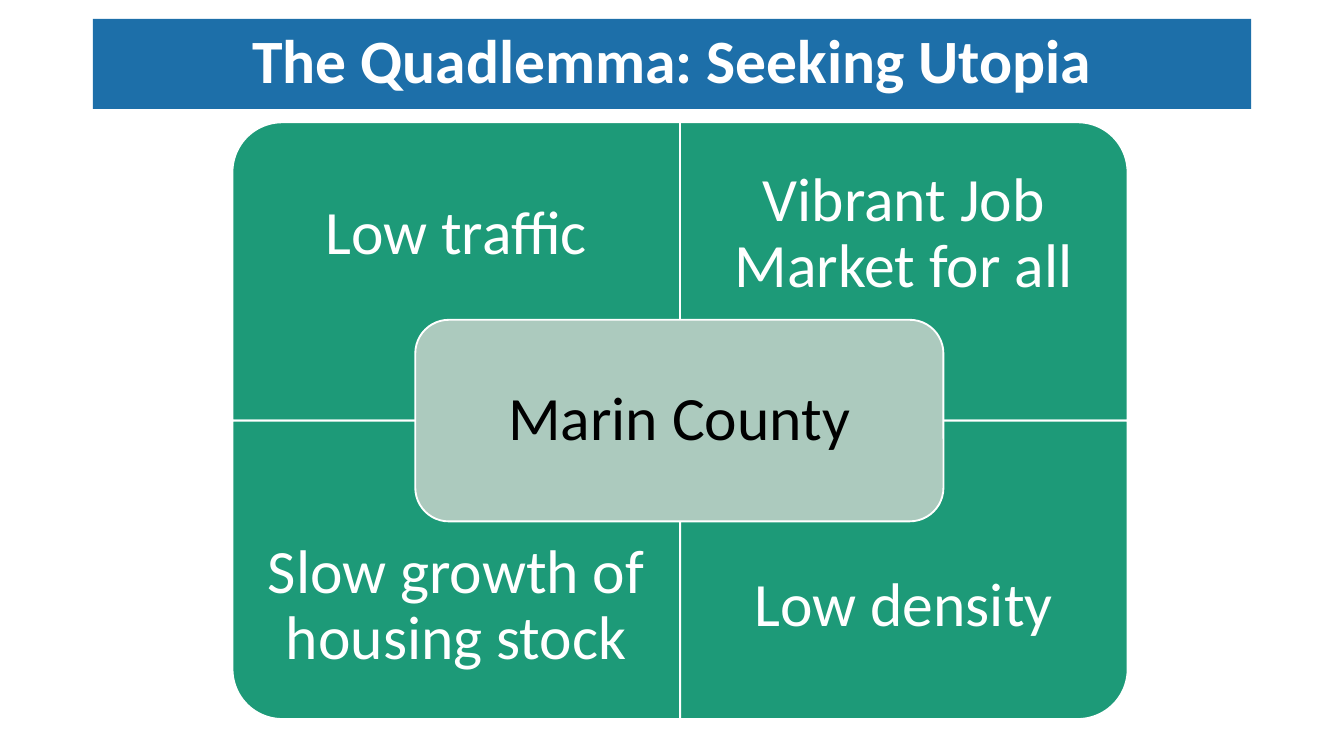
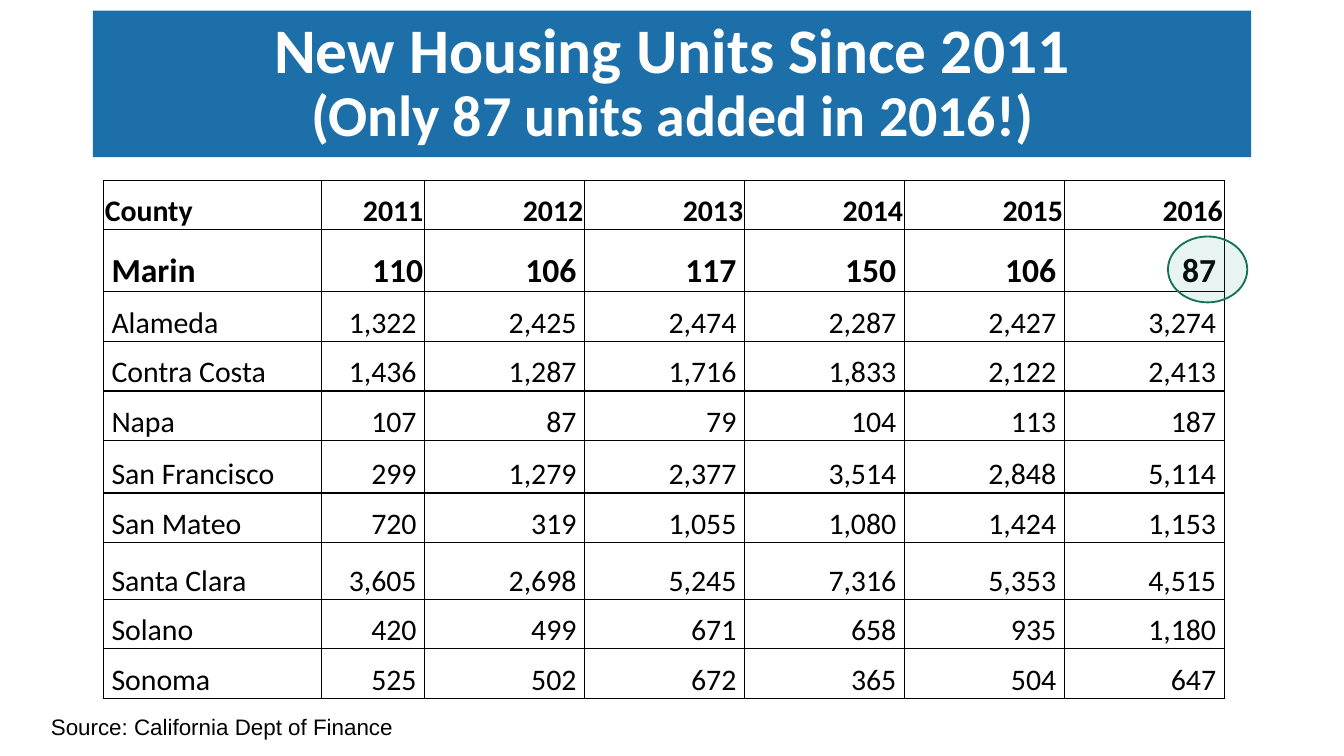
from dataclasses import dataclass

from lxml import etree
from pptx import Presentation
from pptx.dml.color import RGBColor
from pptx.enum.shapes import MSO_SHAPE
from pptx.enum.text import MSO_ANCHOR, MSO_AUTO_SIZE, PP_ALIGN
from pptx.oxml.ns import qn
from pptx.shapes.autoshape import Shape
from pptx.slide import Slide
from pptx.table import _Cell
from pptx.text.text import TextFrame, _Paragraph
from pptx.util import Inches, Pt

COLORS = {
    "band": "1D6FA9",
    "green": "1D9A78",
    "dark_green": "157259",
    "pale_green": "ACCABE",
    "white": "FFFFFF",
    "black": "000000",
}
SLIDE_WIDTH = Inches(10)
SLIDE_HEIGHT = SLIDE_WIDTH * 9 // 16
TITLE_LEFT, TITLE_WIDTH = 0.69, 8.62
QUADRANT_LEFT, QUADRANT_TOP = 1.73, 0.91
QUADRANT_WIDTH, QUADRANT_HEIGHT = 3.33, 2.22
QUADRANT_TEXT_HEIGHT = 1.67

COLUMN_WIDTHS = [1.62, 0.77] + [1.19] * 5
ROW_HEIGHTS = [0.37, 0.46, 0.37, 0.37, 0.37, 0.39, 0.37, 0.42, 0.37, 0.37]
HEADER_ROW, MARIN_ROW = 0, 1
FLUSH_CELL = (MARIN_ROW, 1)
HOUSING_UNITS = [
    ("County", "2011", "2012", "2013", "2014", "2015", "2016"),
    ("Marin", "110", "106", "117", "150", "106", "87"),
    ("Alameda", "1,322", "2,425", "2,474", "2,287", "2,427", "3,274"),
    ("Contra Costa", "1,436", "1,287", "1,716", "1,833", "2,122", "2,413"),
    ("Napa", "107", "87", "79", "104", "113", "187"),
    ("San Francisco", "299", "1,279", "2,377", "3,514", "2,848", "5,114"),
    ("San Mateo", "720", "319", "1,055", "1,080", "1,424", "1,153"),
    ("Santa Clara", "3,605", "2,698", "5,245", "7,316", "5,353", "4,515"),
    ("Solano", "420", "499", "671", "658", "935", "1,180"),
    ("Sonoma", "525", "502", "672", "365", "504", "647"),
]


@dataclass(frozen=True)
class Quadrant:
    text: str
    column: int
    row: int
    rotation: int


@dataclass(frozen=True)
class TitleLine:
    text: str
    size: int


QUADRANTS = [
    Quadrant("Low traffic", 0, 0, 270),
    Quadrant("Vibrant Job Market for all", 1, 0, 0),
    Quadrant("Slow growth of housing stock", 0, 1, 180),
    Quadrant("Low density", 1, 1, 90),
]


def rgb(name: str) -> RGBColor:
    return RGBColor.from_string(COLORS[name])


def add_run(paragraph: _Paragraph, text: str, size: int, color: str = "black",
            bold: bool = False, font: str = "Calibri") -> None:
    run = paragraph.add_run()
    run.text = text
    run.font.name = font
    run.font.size = Pt(size)
    run.font.bold = bold
    run.font.color.rgb = rgb(color)


def set_margins(target: TextFrame | _Cell, left: float, top: float,
                right: float, bottom: float) -> None:
    target.margin_left = Inches(left)
    target.margin_top = Inches(top)
    target.margin_right = Inches(right)
    target.margin_bottom = Inches(bottom)


def add_title(slide: Slide, top: float, height: float, lines: list[TitleLine]) -> None:
    """Turn the title placeholder into the blue band."""
    title = slide.shapes.title
    title.left, title.top = Inches(TITLE_LEFT), Inches(top)
    title.width, title.height = Inches(TITLE_WIDTH), Inches(height)
    title.fill.solid()
    title.fill.fore_color.rgb = rgb("band")
    frame = title.text_frame
    frame.auto_size = MSO_AUTO_SIZE.NONE
    frame.vertical_anchor = MSO_ANCHOR.MIDDLE
    paragraph = frame.paragraphs[0]
    paragraph.alignment = PP_ALIGN.CENTER
    paragraph.line_spacing = 0.9
    for index, line in enumerate(lines):
        if index:
            paragraph.add_line_break()
        add_run(paragraph, line.text, line.size, "white", bold=True)


def add_outlined_shape(slide: Slide, kind: MSO_SHAPE, left: float, top: float,
                       width: float, height: float, fill: str, line: str) -> Shape:
    shape = slide.shapes.add_shape(
        kind, Inches(left), Inches(top), Inches(width), Inches(height))
    shape.shadow.inherit = False
    shape.fill.solid()
    shape.fill.fore_color.rgb = rgb(fill)
    shape.line.color.rgb = rgb(line)
    shape.line.width = Pt(1)
    return shape


def write_label(frame: TextFrame, text: str, color: str, margin: float) -> None:
    frame.word_wrap = True
    frame.vertical_anchor = MSO_ANCHOR.MIDDLE
    set_margins(frame, margin, margin, margin, margin)
    paragraph = frame.paragraphs[0]
    paragraph.alignment = PP_ALIGN.CENTER
    paragraph.line_spacing = 0.9
    add_run(paragraph, text, 33, color)


def add_quadrant(slide: Slide, quadrant: Quadrant) -> None:
    """Draw a quarter with its rounded corner outwards and its label away from the centre."""
    left = QUADRANT_LEFT + quadrant.column * QUADRANT_WIDTH
    top = QUADRANT_TOP + quadrant.row * QUADRANT_HEIGHT
    width, height = QUADRANT_WIDTH, QUADRANT_HEIGHT
    if quadrant.rotation % 180:
        width, height = height, width
    shape = add_outlined_shape(
        slide, MSO_SHAPE.ROUND_1_RECTANGLE,
        left + (QUADRANT_WIDTH - width) / 2, top + (QUADRANT_HEIGHT - height) / 2,
        width, height, "green", "white")
    shape.rotation = quadrant.rotation
    text_top = top + quadrant.row * (QUADRANT_HEIGHT - QUADRANT_TEXT_HEIGHT)
    label = slide.shapes.add_textbox(
        Inches(left), Inches(text_top), Inches(QUADRANT_WIDTH), Inches(QUADRANT_TEXT_HEIGHT))
    write_label(label.text_frame, quadrant.text, "white", 0.26)


def set_borders(cell: _Cell) -> None:
    properties = cell._tc.get_or_add_tcPr()
    for side in ("a:lnL", "a:lnR", "a:lnT", "a:lnB"):
        line = etree.SubElement(properties, qn(side), w=str(Pt(0.75)))
        fill = etree.SubElement(line, qn("a:solidFill"))
        etree.SubElement(fill, qn("a:srgbClr"), val=COLORS["black"])


def fill_cell(cell: _Cell, text: str, row: int, column: int) -> None:
    set_borders(cell)
    cell.fill.background()
    cell.vertical_anchor = MSO_ANCHOR.BOTTOM
    side = 0.01 if row == HEADER_ROW or (row, column) == FLUSH_CELL else 0.06
    set_margins(cell, side, 0.01, side, 0)
    paragraph = cell.text_frame.paragraphs[0]
    paragraph.alignment = PP_ALIGN.RIGHT if column else PP_ALIGN.LEFT
    add_run(paragraph, text, 18 if row == MARIN_ROW else 16,
            bold=row in (HEADER_ROW, MARIN_ROW))


def add_housing_table(slide: Slide) -> None:
    table = slide.shapes.add_table(
        len(ROW_HEIGHTS), len(COLUMN_WIDTHS), Inches(0.77), Inches(1.34),
        Inches(sum(COLUMN_WIDTHS)), Inches(sum(ROW_HEIGHTS))).table
    table.first_row = False
    table.horz_banding = False
    for column, width in zip(table.columns, COLUMN_WIDTHS):
        column.width = Inches(width)
    for row, height in zip(table.rows, ROW_HEIGHTS):
        row.height = Inches(height)
    for row_index, values in enumerate(HOUSING_UNITS):
        for column_index, value in enumerate(values):
            fill_cell(table.cell(row_index, column_index), value, row_index, column_index)


def add_highlight(slide: Slide) -> None:
    """Ring the 2016 figure for Marin with a nearly clear ellipse."""
    ring = add_outlined_shape(
        slide, MSO_SHAPE.OVAL, 8.69, 1.76, 0.59, 0.49, "green", "dark_green")
    color = ring._element.spPr.find(qn("a:solidFill")).find(qn("a:srgbClr"))
    etree.SubElement(color, qn("a:alpha"), val="10000")


def add_source_note(slide: Slide) -> None:
    note = slide.shapes.add_textbox(Inches(0.28), Inches(5.26), Inches(4.29), Inches(0.3))
    note.text_frame.word_wrap = True
    note.text_frame.auto_size = MSO_AUTO_SIZE.SHAPE_TO_FIT_TEXT
    add_run(note.text_frame.paragraphs[0], "Source: California Dept of Finance", 12, font="Arial")


def build_quadlemma(slide: Slide) -> None:
    add_title(slide, 0.14, 0.67, [TitleLine("The Quadlemma: Seeking Utopia", 33)])
    for quadrant in QUADRANTS:
        add_quadrant(slide, quadrant)
    center = add_outlined_shape(
        slide, MSO_SHAPE.ROUNDED_RECTANGLE, 3.09, 2.38, 3.93, 1.5, "pale_green", "white")
    write_label(center.text_frame, "Marin County", "black", 0.14)


def build_housing_units(slide: Slide) -> None:
    add_title(slide, 0.08, 1.09, [
        TitleLine("New Housing Units Since 2011", 34),
        TitleLine("(Only 87 units added in 2016!)", 31),
    ])
    add_housing_table(slide)
    add_highlight(slide)
    add_source_note(slide)


def main() -> None:
    presentation = Presentation()
    presentation.slide_width = SLIDE_WIDTH
    presentation.slide_height = SLIDE_HEIGHT
    title_only = presentation.slide_layouts.get_by_name("Title Only")
    for build in (build_quadlemma, build_housing_units):
        build(presentation.slides.add_slide(title_only))
    presentation.save("out.pptx")


if __name__ == "__main__":
    main()
